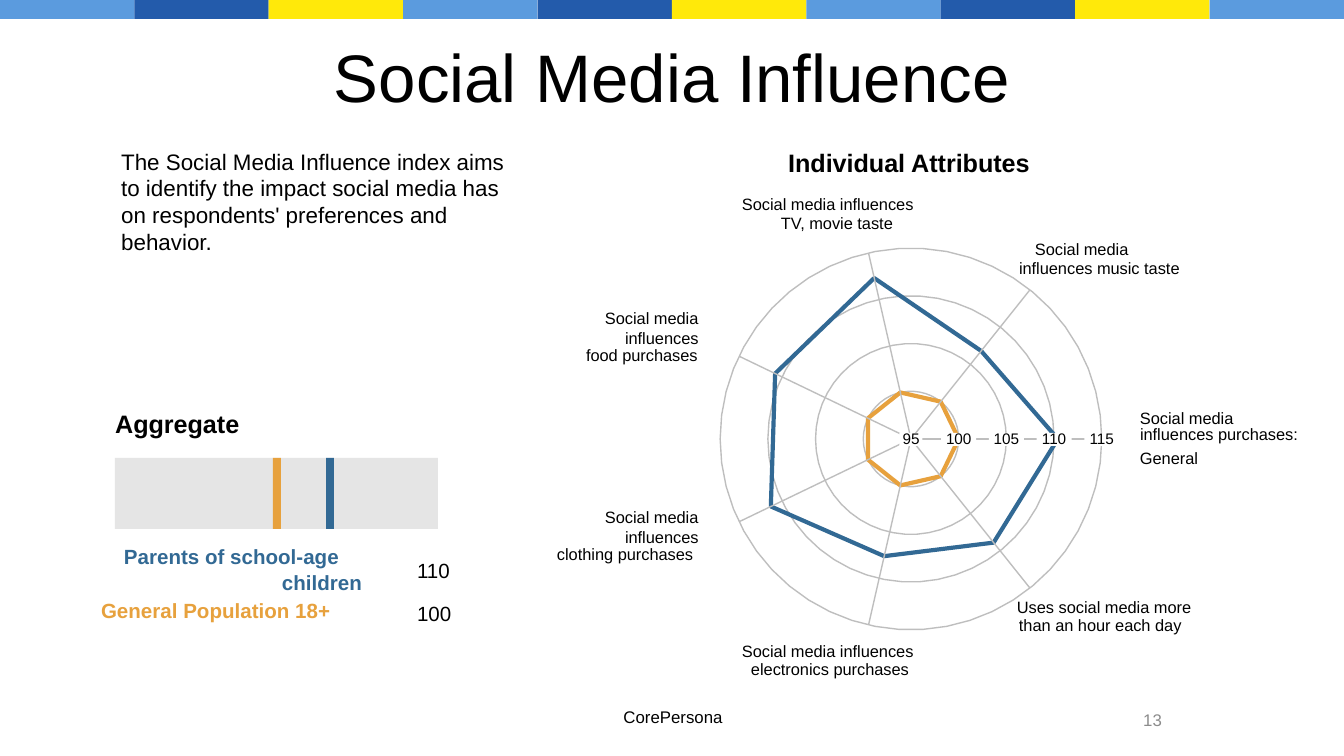
"""Build the Social Media Influence slide with its aggregate bar and radar diagram."""
from math import cos, pi, sin

from lxml import etree
from pptx import Presentation
from pptx.dml.color import RGBColor
from pptx.enum.shapes import MSO_CONNECTOR, MSO_SHAPE
from pptx.enum.text import MSO_ANCHOR, PP_ALIGN
from pptx.oxml.ns import qn
from pptx.util import Pt

RECTANGLE = MSO_SHAPE.RECTANGLE
STRAIGHT = MSO_CONNECTOR.STRAIGHT
TOP, MIDDLE = MSO_ANCHOR.TOP, MSO_ANCHOR.MIDDLE
LEFT, CENTER, RIGHT = PP_ALIGN.LEFT, PP_ALIGN.CENTER, PP_ALIGN.RIGHT

PX = 914400 / 134.4
WIDTH, HEIGHT = 1344, 756
FONT = "Arial"

BLACK = RGBColor(0x00, 0x00, 0x00)
WHITE = RGBColor(0xFF, 0xFF, 0xFF)
NUMBER_GRAY = RGBColor(0x8C, 0x8C, 0x8C)
GRID_GRAY = RGBColor(0xBE, 0xBE, 0xBE)
BAR_GRAY = RGBColor(0xE5, 0xE5, 0xE5)
PARENTS_BLUE = RGBColor(0x32, 0x69, 0x94)
GENERAL_ORANGE = RGBColor(0xE7, 0xA1, 0x3D)
STRIPES = [RGBColor(0x5B, 0x9B, 0xDE), RGBColor(0x23, 0x5B, 0xAB), RGBColor(0xFF, 0xE9, 0x0A)]
STRIPE_COUNT, STRIPE_HEIGHT = 10, 19

HEADINGS = [
    ("Social Media Influence", (67, 31, 1210, 90), 36, BLACK, False, CENTER, MIDDLE),
    ("Aggregate", (102, 402, 208, 46), 13.5, BLACK, True, LEFT, TOP),
    ("The Social Media Influence index aims to identify the impact social media has "
     "on respondents' preferences and behavior.",
     (108, 141, 429, 210), 12, BLACK, False, LEFT, TOP),
    ("CorePersona", (569, 700, 208, 34), 9, BLACK, False, CENTER, TOP),
    ("Individual Attributes", (775, 141, 349, 75), 13.5, BLACK, True, LEFT, TOP),
    ("13", (1003, 700, 172, 40), 9, NUMBER_GRAY, False, RIGHT, MIDDLE),
]

BAR_PARTS = [(115, 323, BAR_GRAY), (273, 8, GENERAL_ORANGE), (326, 8, PARENTS_BLUE)]
BAR_TOP, BAR_HEIGHT = 458, 71

LEGEND = [
    ("Parents of school-age", (124, 548, 252, 20), PARENTS_BLUE, True),
    ("children", (282, 576, 94, 16), PARENTS_BLUE, True),
    ("General Population 18+", (101, 602, 275, 20), GENERAL_ORANGE, True),
    ("110", (417, 564, 39, 16), BLACK, False),
    ("100", (417, 607, 39, 16), BLACK, False),
]

RADAR_CENTER = (911, 439)
UNIT = 9.54
TICKS = [95, 100, 105, 110, 115]
RING_POINTS = 50
SERIES = [
    ([110.4, 106.8, 112.3, 110.8, 111.3, 107.6, 108.9], PARENTS_BLUE),
    ([100] * 7, GENERAL_ORANGE),
]
AXIS_LABELS = [
    ("Social media", 1140, 413, 105),
    ("influences purchases:", 1140, 429, 179),
    ("General", 1140, 453, 65),
    ("Social media", 1035, 244, 105),
    ("influences music taste", 1019, 263, 184),
    ("Social media influences", 742, 199, 194),
    ("TV, movie taste", 781, 218, 129),
    ("Social media", 605, 313, 105),
    ("influences", 625, 333, 83),
    ("food purchases", 586, 350, 126),
    ("Social media", 605, 512, 105),
    ("influences", 625, 532, 83),
    ("clothing purchases", 557, 549, 156),
    ("Social media influences", 742, 646, 194),
    ("electronics purchases", 751, 664, 179),
    ("Uses social media more", 1017, 602, 196),
    ("than an hour each day", 1019, 620, 185),
]


def emu(*lengths):
    return [round(length * PX) for length in lengths]


def add_text(page, text, place, size, color, bold=False, align=LEFT, anchor=MIDDLE, tight=False):
    box = page.shapes.add_textbox(*emu(*place))
    frame = box.text_frame
    frame.text = text
    frame.word_wrap = not tight
    frame.vertical_anchor = anchor
    para = frame.paragraphs[0]
    para.alignment = align
    if tight:
        frame.margin_left = frame.margin_right = frame.margin_top = frame.margin_bottom = 0
        para.line_spacing = Pt(size)
    font = para.runs[0].font
    font.name, font.size, font.bold = FONT, Pt(size), bold
    font.color.rgb = color


def add_block(page, place, color):
    block = page.shapes.add_shape(RECTANGLE, *emu(*place))
    block.shadow.inherit = False
    block.fill.solid()
    block.fill.fore_color.rgb = color
    block.line.fill.background()


def radar_points(values):
    x, y = RADAR_CENTER
    points = []
    for index, value in enumerate(values):
        angle = 2 * pi * index / len(values)
        radius = (value - TICKS[0]) * UNIT
        points.append(emu(x + radius * cos(angle), y - radius * sin(angle)))
    return points


def add_outline(page, values, color, weight):
    points = radar_points(values)
    builder = page.shapes.build_freeform(*points[0])
    builder.add_line_segments(points[1:], close=True)
    outline = builder.convert_to_shape()
    outline.shadow.inherit = False
    outline.fill.background()
    outline.line.color.rgb = color
    outline.line.width = Pt(weight)


def add_spoke(page, end):
    spoke = page.shapes.add_connector(STRAIGHT, *emu(*RADAR_CENTER), *end)
    spoke.line.color.rgb = GRID_GRAY
    spoke.line.width = Pt(0.75)
    etree.SubElement(spoke._element.spPr, qn("a:effectLst"))


def add_radar(page):
    for level in reversed(TICKS[1:]):
        add_outline(page, [level] * RING_POINTS, GRID_GRAY, 0.75)
    for values, color in SERIES:
        add_outline(page, values, color, 2.25)
    for end in radar_points([TICKS[-1]] * len(SERIES[0][0])):
        add_spoke(page, end)
    for text, left, top, width in AXIS_LABELS:
        add_text(page, text, (left, top, width, 14), 8.8, BLACK, tight=True)
    x, y = RADAR_CENTER
    for tick in TICKS:
        middle = x + (tick - TICKS[0]) * UNIT
        width = 23 if tick < 100 else 35
        add_block(page, (middle - width / 2, y - 6, width, 13), WHITE)
        add_text(page, str(tick), (middle - width / 2, y - 5, width, 11), 8.2, BLACK,
                 align=CENTER, tight=True)


def main():
    deck = Presentation()
    deck.slide_width, deck.slide_height = emu(WIDTH, HEIGHT)
    page = deck.slides.add_slide(deck.slide_layouts[6])
    stripe_width = WIDTH / STRIPE_COUNT
    for index in range(STRIPE_COUNT):
        add_block(page, (index * stripe_width, 0, stripe_width, STRIPE_HEIGHT),
                  STRIPES[index % len(STRIPES)])
    for heading in HEADINGS:
        add_text(page, *heading)
    for left, width, color in BAR_PARTS:
        add_block(page, (left, BAR_TOP, width, BAR_HEIGHT), color)
    for text, place, color, bold in LEGEND:
        add_text(page, text, place, 11, color, bold, tight=True)
    add_radar(page)
    deck.save("out.pptx")


if __name__ == "__main__":
    main()
